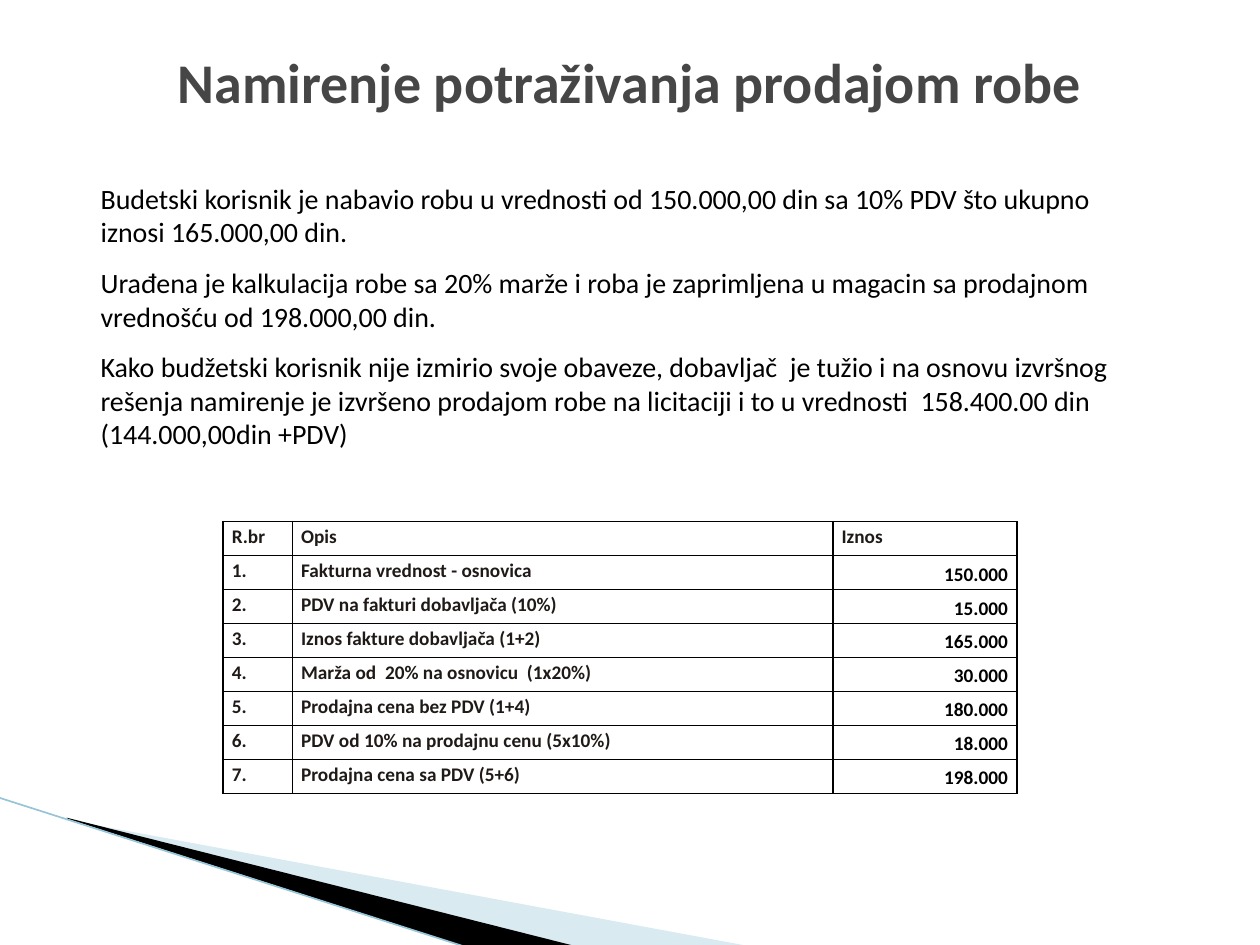
from lxml.etree import SubElement
from pptx import Presentation
from pptx.dml.color import RGBColor
from pptx.enum.text import MSO_ANCHOR, PP_ALIGN
from pptx.oxml.ns import qn
from pptx.util import Inches, Pt

TITLE = "Namirenje potraživanja prodajom robe"
STORY = [
    "Budetski korisnik je nabavio robu u vrednosti od 150.000,00 din sa 10% PDV što ukupno iznosi 165.000,00 din.",
    "Urađena je kalkulacija robe sa 20% marže i roba je zaprimljena u magacin sa prodajnom vrednošću od 198.000,00 din.",
    "Kako budžetski korisnik nije izmirio svoje obaveze, dobavljač  je tužio i na osnovu izvršnog rešenja "
    "namirenje je izvršeno prodajom robe na licitaciji i to u vrednosti  158.400.00 din (144.000,00din +PDV)",
]
HEADINGS = ("R.br", "Opis", "Iznos")
ITEMS = [
    ("Fakturna vrednost - osnovica", "150.000"),
    ("PDV na fakturi dobavljača (10%)", "15.000"),
    ("Iznos fakture dobavljača (1+2)", "165.000"),
    ("Marža od  20% na osnovicu  (1x20%)", "30.000"),
    ("Prodajna cena bez PDV (1+4)", "180.000"),
    ("PDV od 10% na prodajnu cenu (5x10%)", "18.000"),
    ("Prodajna cena sa PDV (5+6)", "198.000"),
]
COLUMN_WIDTHS = (0.55, 4.29, 1.46)
ROW_HEIGHT = 0.27
COLORS = {"title": "464646", "black": "000000", "label": "1F1A17", "pale": "A0CBDC", "edge": "97C5D8"}
WEDGES = [
    ("pale", 40, [(0.55, 6.51), (5.95, 7.51), (4.56, 7.51), (0.55, 6.5)]),
    ("black", 100, [(0.53, 6.49), (4.57, 7.51), (3.72, 7.52), (0.54, 6.5)]),
]


def color(name):
    """Return the named palette colour."""
    return RGBColor.from_string(COLORS[name])


def style(paragraph, size, color_name, bold=False):
    """Set the font of a paragraph."""
    font = paragraph.font
    font.name, font.size, font.bold = "Calibri", Pt(size), bold
    font.color.rgb = color(color_name)


def add_wedges(slide):
    """Draw the wedges and edge line in the lower left corner."""
    for color_name, opacity, points in WEDGES:
        corners = [(Inches(x), Inches(y)) for x, y in points]
        outline = slide.shapes.build_freeform(*corners[0])
        outline.add_line_segments(corners[1:], close=True)
        wedge = outline.convert_to_shape()
        wedge.shadow.inherit = False
        wedge.line.fill.background()
        wedge.fill.solid()
        wedge.fill.fore_color.rgb = color(color_name)
        if opacity < 100:
            tint = wedge.fill._xPr.find(qn("a:solidFill"))[0]
            SubElement(tint, qn("a:alpha"), val=str(opacity * 1000))
    edge = slide.shapes.add_connector(1, Inches(-0.01), Inches(6.33), Inches(3.71), Inches(7.52))
    edge.line.color.rgb = color("edge")
    edge.line.width = Pt(0.95)
    SubElement(edge._element.spPr, qn("a:effectLst"))


def add_title(slide):
    """Place and fill the title."""
    title = slide.shapes.title
    title.left, title.top, title.width, title.height = map(Inches, (0.5, 0.3, 9, 0.69))
    title.text_frame.text = TITLE
    title.text_frame.vertical_anchor = MSO_ANCHOR.MIDDLE
    heading = title.text_frame.paragraphs[0]
    heading.alignment = PP_ALIGN.CENTER
    style(heading, 32, "title", True)


def add_story(slide):
    """Add the explanatory paragraphs."""
    frame = slide.shapes.add_textbox(*map(Inches, (0.7, 1.39, 8.58, 2.26))).text_frame
    frame.word_wrap = True
    frame.text = "\n".join(STORY)
    for index, paragraph in enumerate(frame.paragraphs):
        style(paragraph, 16, "black")
        if index:
            paragraph.space_before = Pt(9.75)


def format_cell(cell, text, is_amount):
    """Fill one table cell and draw its borders."""
    cell.text = text
    cell.margin_left = cell.margin_right = Inches(0.07)
    cell.margin_top = cell.margin_bottom = 0
    cell.vertical_anchor = MSO_ANCHOR.MIDDLE if is_amount else MSO_ANCHOR.TOP
    paragraph = cell.text_frame.paragraphs[0]
    paragraph.line_spacing = 1.15
    paragraph.alignment = PP_ALIGN.RIGHT if is_amount else PP_ALIGN.LEFT
    style(paragraph, 11, "black" if is_amount else "label", True)
    properties = cell._tc.get_or_add_tcPr()
    for side in ("lnL", "lnR", "lnT", "lnB"):
        border = SubElement(properties, qn(f"a:{side}"), w=str(Pt(1)))
        SubElement(SubElement(border, qn("a:solidFill")), qn("a:srgbClr"), val=COLORS["black"])
    cell.fill.background()


def add_calculation(slide):
    """Add the price calculation table."""
    rows = [HEADINGS] + [(f"{number}.", *item) for number, item in enumerate(ITEMS, 1)]
    size = (sum(COLUMN_WIDTHS), ROW_HEIGHT * len(rows))
    table = slide.shapes.add_table(
        len(rows), len(HEADINGS), *map(Inches, (1.77, 4.14, *size))
    ).table
    for column, width in zip(table.columns, COLUMN_WIDTHS):
        column.width = Inches(width)
    for r, values in enumerate(rows):
        table.rows[r].height = Inches(ROW_HEIGHT)
        for c, value in enumerate(values):
            format_cell(table.cell(r, c), value, r > 0 and c == 2)


def main():
    """Build the slide and save it."""
    presentation = Presentation()
    presentation.slide_width, presentation.slide_height = Inches(10), Inches(7.5)
    slide = presentation.slides.add_slide(presentation.slide_layouts[5])
    add_wedges(slide)
    add_title(slide)
    add_story(slide)
    add_calculation(slide)
    presentation.save("out.pptx")


if __name__ == "__main__":
    main()
